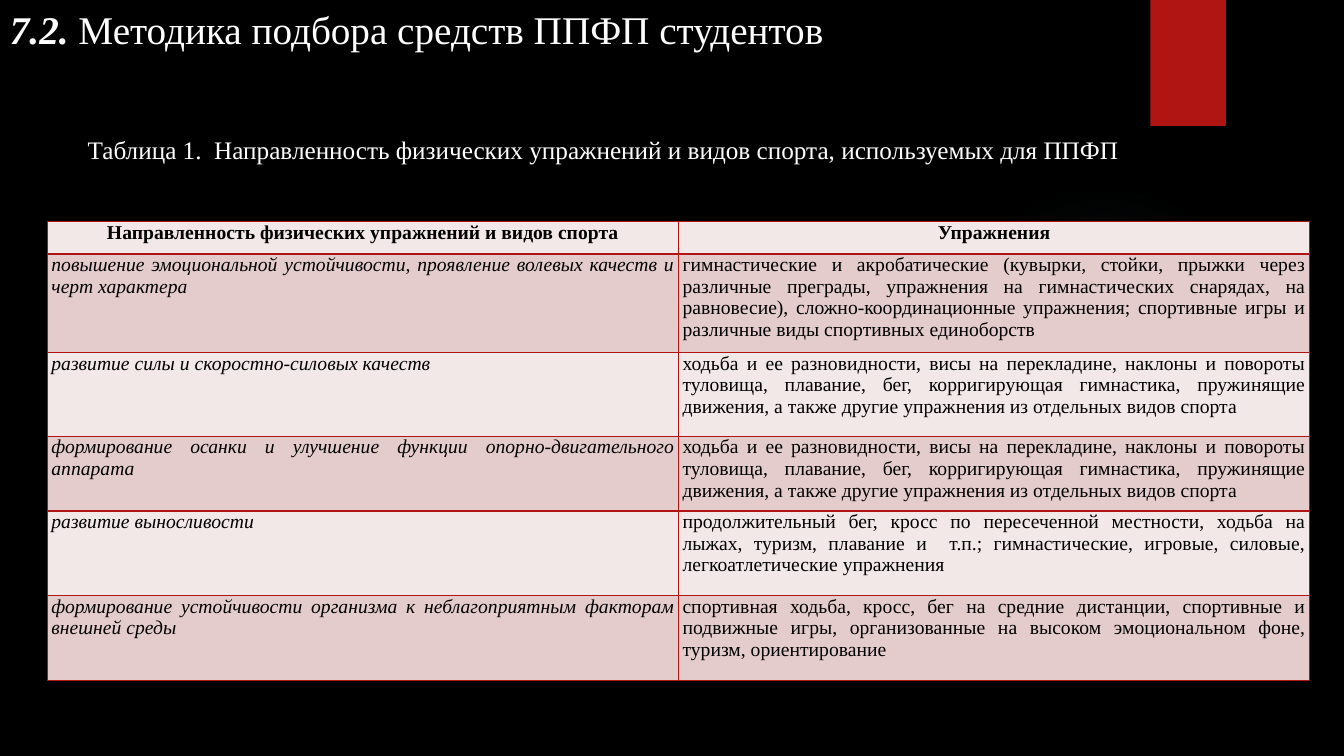
from dataclasses import dataclass

from lxml import etree
from pptx import Presentation
from pptx import util as u
from pptx.dml.color import RGBColor
from pptx.enum import shapes, text
from pptx.oxml.ns import qn


@dataclass(frozen=True)
class Theme:
    font: str = "Times New Roman"
    back: str = "000000"
    light: str = "FFFFFF"
    dark: str = "000000"
    accent: str = "B01513"
    glow: str = "50B9C1"
    bands: tuple[str, str] = ("F2E8E7", "E4CCCC")
    title: int = 28
    caption: int = 18
    cell: int = 14
    border: int = 1


@dataclass(frozen=True)
class Row:
    height: float
    focus: str
    exercises: str


T = Theme()
ALIGN = text.PP_ALIGN

POSTURE_AND_STRENGTH = (
    "ходьба и ее разновидности, висы на перекладине, наклоны и повороты туловища, плавание, бег, "
    "корригирующая гимнастика, пружинящие движения, а также другие упражнения из отдельных видов спорта"
)
ROWS = [
    Row(0.32, "Направленность физических упражнений и видов спорта", "Упражнения"),
    Row(0.98, "повышение эмоциональной устойчивости, проявление волевых качеств и черт характера",
        "гимнастические и акробатические (кувырки, стойки, прыжки через различные преграды, "
        "упражнения на гимнастических снарядах, на равновесие), сложно-координационные упражнения; "
        "спортивные игры и различные виды спортивных единоборств"),
    Row(0.83, "развитие силы и скоростно-силовых качеств", POSTURE_AND_STRENGTH),
    Row(0.74, "формирование осанки и улучшение функции опорно-двигательного аппарата",
        POSTURE_AND_STRENGTH),
    Row(0.84, "развитие выносливости",
        "продолжительный бег, кросс по пересеченной местности, ходьба на лыжах, туризм, плавание "
        "и  т.п.; гимнастические, игровые, силовые, легкоатлетические упражнения"),
    Row(0.84, "формирование устойчивости организма к неблагоприятным факторам внешней среды",
        "спортивная ходьба, кросс, бег на средние дистанции, спортивные и подвижные игры, "
        "организованные на высоком эмоциональном фоне, туризм, ориентирование"),
]


def rgb(color: str) -> RGBColor:
    return RGBColor.from_string(color)


def child(parent, tag: str, **attrs: object):
    return etree.SubElement(parent, qn(tag), {k: str(v) for k, v in attrs.items()})


def add_run(p, words: str, *, size: int, color: str, bold: bool = False, italic: bool = False) -> None:
    r = p.add_run()
    r.text = words
    r.font.name, r.font.size = T.font, u.Pt(size)
    r.font.bold, r.font.italic = bold, italic
    r.font.color.rgb = rgb(color)


def add_box(s, left: float, top: float, width: float, height: float, wrap: bool = True):
    tf = s.shapes.add_textbox(*map(u.Inches, (left, top, width, height))).text_frame
    tf.word_wrap = wrap
    return tf.paragraphs[0]


def add_plain_shape(s, kind, left: float, top: float, width: float, height: float):
    sp = s.shapes.add_shape(kind, *map(u.Inches, (left, top, width, height)))
    sp.shadow.inherit = False
    sp.line.fill.background()
    return sp


def fill_glow(sp, color: str, stops: list[tuple[int, int]]) -> None:
    """Radial fill; each stop is (position %, opacity %)."""
    sp.fill.background()
    spPr = sp.element.spPr
    grad = etree.Element(qn("a:gradFill"))
    spPr.replace(spPr.find(qn("a:noFill")), grad)
    gs_list = child(grad, "a:gsLst")
    for position, opacity in stops:
        clr = child(child(gs_list, "a:gs", pos=position * 1000), "a:srgbClr", val=color)
        child(clr, "a:alpha", val=opacity * 1000)
    child(child(grad, "a:path", path="circle"), "a:fillToRect", l=50000, t=50000, r=50000, b=50000)


def set_borders(cell, color: str, width: int) -> None:
    tcPr = cell._tc.get_or_add_tcPr()
    for i, side in enumerate("LRTB"):
        ln = etree.Element(qn(f"a:ln{side}"), w=str(u.Pt(width)))
        child(child(ln, "a:solidFill"), "a:srgbClr", val=color)
        tcPr.insert(i, ln)


def add_exercise_table(s, rows: list[Row], left: float, top: float, column: float) -> None:
    height = sum(row.height for row in rows)
    tbl = s.shapes.add_table(len(rows), 2, *map(u.Inches, (left, top, 2 * column, height))).table
    tbl.first_row = tbl.horz_banding = False
    for i, row in enumerate(rows):
        tbl.rows[i].height = u.Inches(row.height)
        header = i == 0
        for j, words in enumerate((row.focus, row.exercises)):
            cell = tbl.cell(i, j)
            cell.margin_left = cell.margin_right = u.Inches(0.04)
            cell.margin_top = cell.margin_bottom = 0
            cell.fill.solid()
            cell.fill.fore_color.rgb = rgb(T.bands[i % 2])
            set_borders(cell, T.accent, T.border)
            p = cell.text_frame.paragraphs[0]
            p.alignment = ALIGN.CENTER if header else ALIGN.JUSTIFY
            add_run(p, words, size=T.cell, color=T.dark, bold=header, italic=not header and j == 0)


def main() -> None:
    prs = Presentation()
    prs.slide_width, prs.slide_height = u.Inches(13.33), u.Inches(7.5)
    s = prs.slides.add_slide(prs.slide_layouts[6])
    s.background.fill.solid()
    s.background.fill.fore_color.rgb = rgb(T.back)

    # Backdrop: faint glow and red tab
    glow = add_plain_shape(s, shapes.MSO_SHAPE.OVAL, 9.41, 1.83, 3.08, 3.08)
    fill_glow(glow, T.glow, [(0, 7), (36, 6), (69, 0)])
    tab = add_plain_shape(s, shapes.MSO_SHAPE.RECTANGLE, 11.41, 0, 0.75, 1.25)
    tab.fill.solid()
    tab.fill.fore_color.rgb = rgb(T.accent)

    # Title
    p = add_box(s, 0, 0, 13.21, 1.04)
    p.alignment = ALIGN.JUSTIFY
    add_run(p, "7.2. ", size=T.title, color=T.light, bold=True, italic=True)
    add_run(p, "Методика подбора средств ППФП студентов", size=T.title, color=T.light)

    # Table and its caption
    add_exercise_table(s, ROWS, left=0.47, top=2.2, column=6.26)
    p = add_box(s, 0.77, 1.28, 10.68, 0.4, wrap=False)
    add_run(p, "Таблица 1.  Направленность физических упражнений и видов спорта, используемых для ППФП",
            size=T.caption, color=T.light)

    prs.save("out.pptx")


if __name__ == "__main__":
    main()
